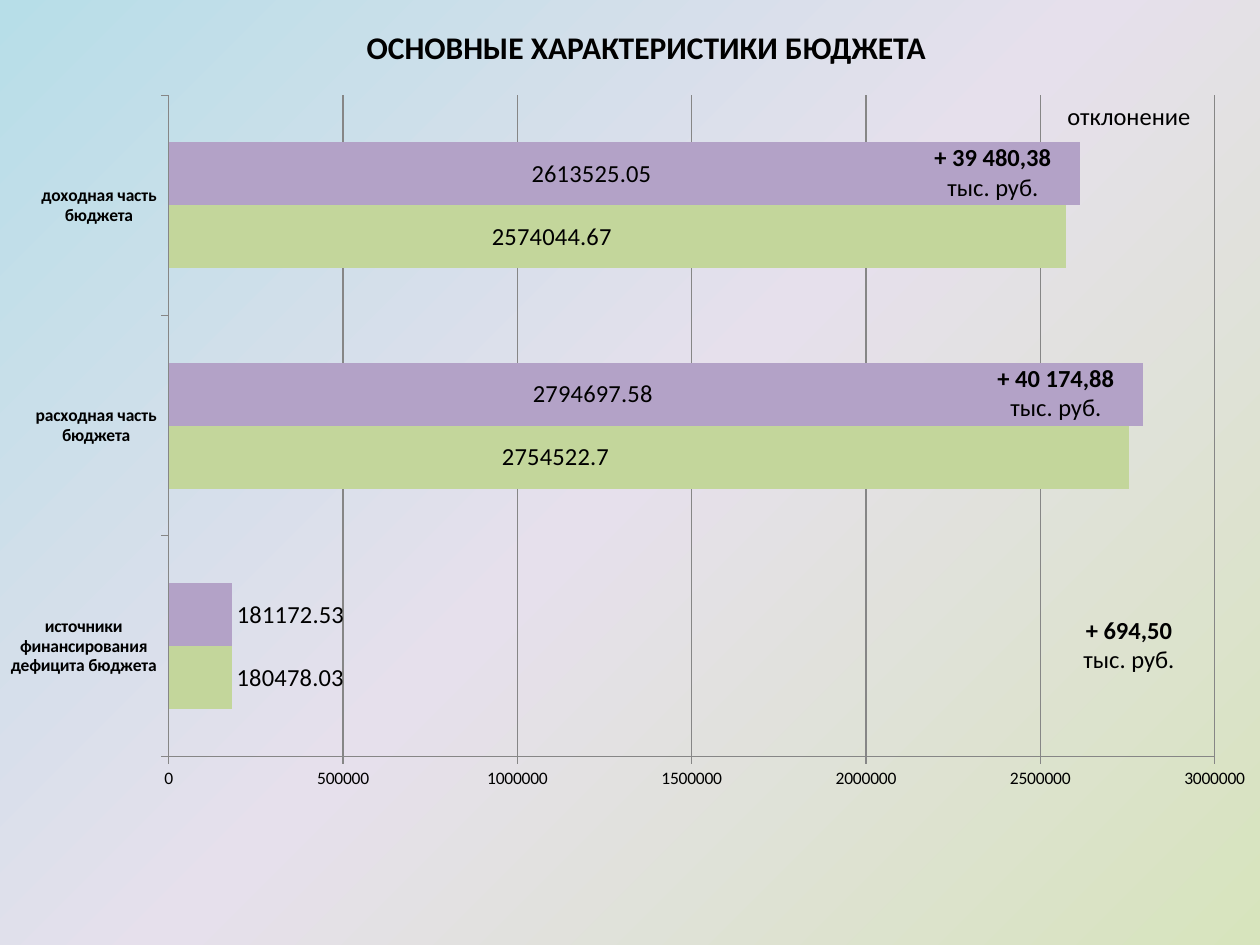
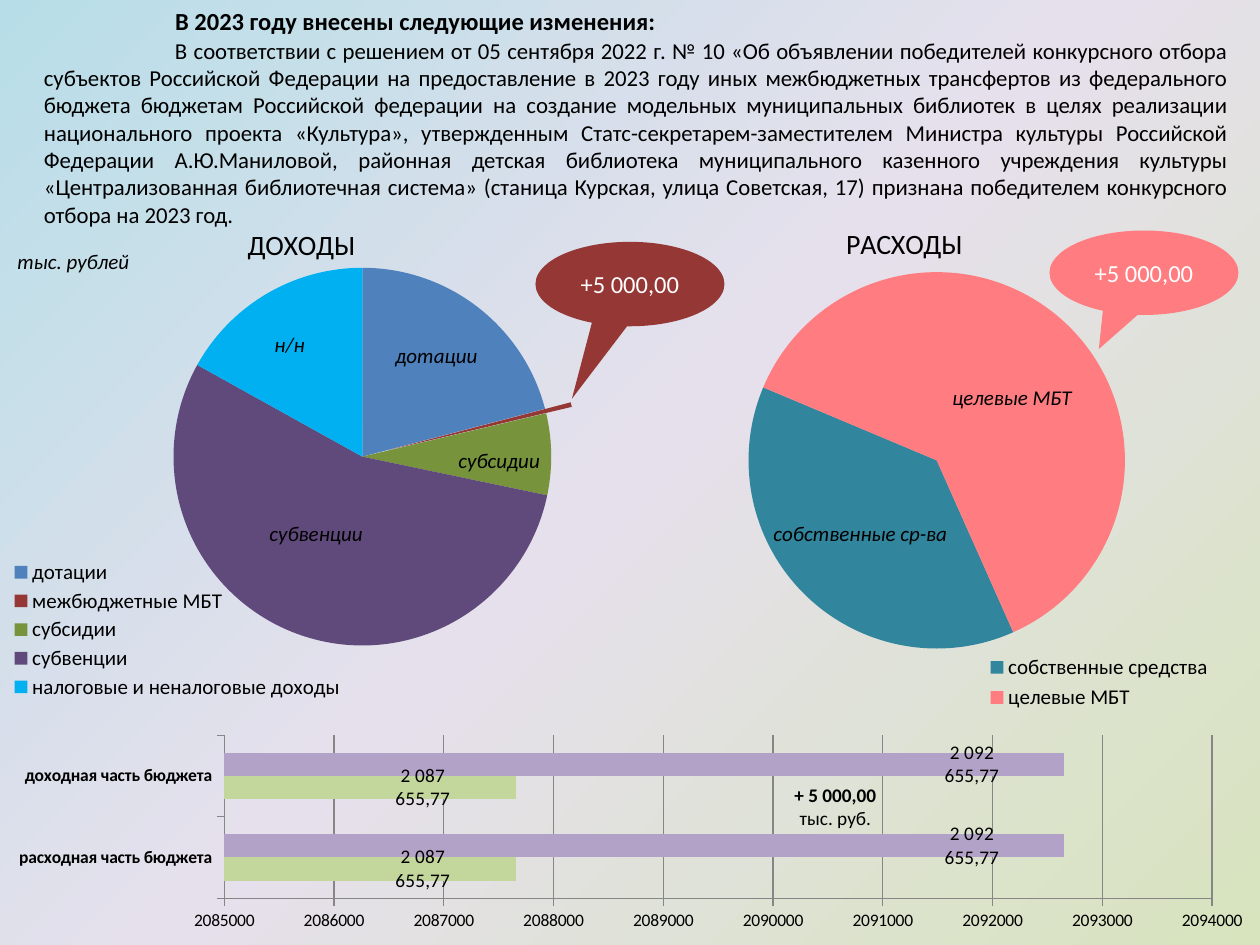
"""Builds two budget slides: main figures, then the changes made in 2023."""
from lxml import etree
from pptx import Presentation
from pptx import util as u
from pptx.chart import data as chart_data
from pptx.dml import color as dml
from pptx.enum import chart as ce
from pptx.enum import shapes, text
from pptx.oxml import ns

COLORS = {
    "text": "000000", "white": "FFFFFF", "grid": "868686",
    "before": "C3D69B", "after": "B3A2C7",
    "grants": "4F81BD", "transfers": "953735", "subsidies": "77933C",
    "subventions": "604A7B", "taxes": "00B0F0",
    "own": "31859C", "targeted": "FF7C80",
}
BACKGROUND = [(0, "D7E4BD"), (50, "E6E0EC"), (100, "B7DEE8")]
FONT = "Calibri"
BAR_COLORS = ("before", "after")
UNIT = "тыс. руб."

TITLE = "ОСНОВНЫЕ ХАРАКТЕРИСТИКИ БЮДЖЕТА"
BUDGET = {
    "at": (0, 0.75, 10, 6.75), "plot": (0.134, 0, 0.83, 0.778),
    "scale": (0, 3000000, 500000), "size": 14,
    "categories": ["источники финансирования дефицита бюджета",
                   "расходная часть бюджета", "доходная часть бюджета"],
    "values": [(180478.03, 2754522.7, 2574044.67),
               (181172.53, 2794697.58, 2613525.05)],
    "labels": [{1: (-0.074, None), 2: (-0.052, None)},
               {1: (-0.05, None), 2: (-0.026, None)}],
}
DEVIATIONS = [("+ 39 480,38", 7.17, 1.08), ("+ 40 174,88", 7.67, 2.83),
              ("+ 694,50", 8.25, 4.83)]

HEADING = "В 2023 году внесены следующие изменения:"
DECISION = (
    "В соответствии с решением от 05 сентября 2022 г. № 10 «Об объявлении "
    "победителей конкурсного отбора субъектов Российской Федерации на "
    "предоставление в 2023 году иных межбюджетных трансфертов из федерального "
    "бюджета бюджетам Российской федерации на создание модельных муниципальных "
    "библиотек в целях реализации национального проекта «Культура», "
    "утвержденным Статс-секретарем-заместителем Министра культуры Российской "
    "Федерации А.Ю.Маниловой, районная детская библиотека муниципального "
    "казенного учреждения культуры «Централизованная библиотечная система» "
    "(станица Курская, улица Советская, 17) признана победителем конкурсного "
    "отбора на 2023 год.")
PIES = [
    {"title": "ДОХОДЫ", "at": (0, 1.5, 5.5, 4.67), "start": 0, "exploded": 1,
     "plot": (0.212, 0.134, 0.622, 0.642), "title_at": (0.35, 0.055),
     "legend_at": (0.011, 0.624, 0.49, 0.25),
     "slices": [("дотации", 21, "grants"), ("межбюджетные МБТ", 0.4, "transfers"),
                ("субсидии", 7, "subsidies"), ("субвенции", 55, "subventions"),
                ("налоговые и неналоговые доходы", 17, "taxes")]},
    {"title": "РАСХОДЫ", "at": (4.83, 1.58, 5, 4.33), "start": 156, "exploded": None,
     "plot": (0.165, 0.134, 0.712, 0.69), "title_at": (0.369, 0.038),
     "legend_at": (0.589, 0.826, 0.38, 0.12),
     "slices": [("собственные средства", 38, "own"), ("целевые МБТ", 62, "targeted")]},
]
CALLOUTS = [("transfers", 4.25, 1.92, (-0.307, 1.358)),
            ("targeted", 8.33, 1.83, (-0.239, 0.904))]
CHANGE = "+5 000,00"
CHANGES = {
    "at": (0, 5.83, 10, 1.67), "plot": (0.178, 0, 0.784, 0.778),
    "scale": (2085000, 2094000, 1000), "size": 11,
    "categories": ["расходная часть бюджета", "доходная часть бюджета"],
    "values": [(2087655.77,) * 2, (2092655.77,) * 2],
    "labels": [dict.fromkeys((0, 1), (0.042, "2 087 655,77")),
               dict.fromkeys((0, 1), (0.26, "2 092 655,77"))],
}
NOTES = [("тыс. рублей", 0.04, 1.92, 1.1), ("целевые МБТ", 7.46, 3, 1.16),
         ("собственные ср-ва", 6.04, 4.08, 1.59), ("субвенции", 2.04, 4.08, 0.95),
         ("н/н", 2.08, 2.58, 0.45), ("дотации", 3.04, 2.67, 0.85),
         ("субсидии", 3.54, 3.5, 0.85)]


def rgb(name):
    return dml.RGBColor.from_string(COLORS[name])


def assign(target, **values):
    for key, value in values.items():
        setattr(target, key, value)


def style_font(font, size, color="text", **values):
    assign(font, name=FONT, size=u.Pt(size), **values)
    font.color.rgb = rgb(color)


def box(at):
    return [u.Inches(length) for length in at]


def write(shape, lines, size, align=text.PP_ALIGN.CENTER, color="text",
          anchor=text.MSO_ANCHOR.TOP, wrap=True, indent=0):
    frame = shape.text_frame
    frame.text = "\n".join(line for line, _ in lines)
    assign(frame, word_wrap=wrap, auto_size=text.MSO_AUTO_SIZE.NONE,
           vertical_anchor=anchor)
    for paragraph, (_, formats) in zip(frame.paragraphs, lines):
        paragraph.alignment = align
        style_font(paragraph.runs[0].font, size, color, **formats)
        if indent:
            properties = paragraph._p.get_or_add_pPr()
            properties.set("marL", "0")
            properties.set("indent", str(u.Inches(indent)))


def add_text(slide, at, lines, size, **formats):
    write(slide.shapes.add_textbox(*box(at)), lines, size, **formats)


def set_title(slide, at, line, size, **formats):
    title = slide.shapes.title
    assign(title, **dict(zip(("left", "top", "width", "height"), box(at))))
    write(title, [(line, {"bold": True})], size, **formats)


def add_deviation(slide, amount, left, top, size, height):
    add_text(slide, (left, top, 1.42, height),
             [(amount, {"bold": True}), (UNIT, {"bold": False})], size)


def place(parent, index, numbers, modes=("xMode", "yMode"), inner=False):
    for old in parent.findall(ns.qn("c:layout")):
        parent.remove(old)
    layout = etree.Element(ns.qn("c:layout"))
    manual = etree.SubElement(layout, ns.qn("c:manualLayout"))
    settings = [("layoutTarget", "inner")] if inner else []
    settings += [(mode, "edge") for mode in modes]
    settings += list(zip("xywh", map(str, numbers)))
    for tag, value in settings:
        etree.SubElement(manual, ns.qn("c:" + tag)).set("val", value)
    parent.insert(index, layout)


def clear_fill():
    properties = etree.Element(ns.qn("c:spPr"))
    etree.SubElement(properties, ns.qn("a:noFill"))
    line = etree.SubElement(properties, ns.qn("a:ln"))
    etree.SubElement(line, ns.qn("a:noFill"))
    return properties


def add_chart(slide, kind, at, plot_at, categories, series):
    source = chart_data.CategoryChartData()
    source.categories = categories
    for name, values in series:
        source.add_series(name, values)
    chart = slide.shapes.add_chart(kind, *box(at), source).chart
    style_font(chart.font, 18)
    assign(chart, has_legend=False, has_title=False)
    space = chart._chartSpace
    space.find(ns.qn("c:chart")).addnext(clear_fill())
    area = space.find(".//" + ns.qn("c:plotArea"))
    place(area, 0, plot_at, inner=True)
    area.append(clear_fill())
    return chart


def add_bars(slide, bars):
    chart = add_chart(slide, ce.XL_CHART_TYPE.BAR_CLUSTERED, bars["at"], bars["plot"],
                      bars["categories"], [("", values) for values in bars["values"]])
    plot = chart.plots[0]
    assign(plot, gap_width=150, overlap=0, vary_by_categories=False)
    low, high, step = bars["scale"]
    assign(chart.value_axis, minimum_scale=low, maximum_scale=high, major_unit=step,
           has_major_gridlines=True)
    chart.value_axis.major_gridlines.format.line.color.rgb = rgb("grid")
    for axis, bold in ((chart.category_axis, True), (chart.value_axis, False)):
        axis.major_tick_mark = ce.XL_TICK_MARK.OUTSIDE
        axis.format.line.color.rgb = rgb("grid")
        style_font(axis.tick_labels.font, 10, bold=bold)
    for row, color, labels in zip(plot.series, BAR_COLORS, bars["labels"]):
        row.format.fill.solid()
        row.format.fill.fore_color.rgb = rgb(color)
        assign(row.data_labels, show_value=True,
               position=ce.XL_LABEL_POSITION.OUTSIDE_END)
        style_font(row.data_labels.font, bars["size"])
        for index, (shift, words) in labels.items():
            label = row.points[index].data_label
            if words:
                label.text_frame.text = words
                style_font(label.text_frame.paragraphs[0].runs[0].font, bars["size"])
            else:
                style_font(label.font, bars["size"])
            label.position = ce.XL_LABEL_POSITION.CENTER
        for entry in row._element.findall(".//" + ns.qn("c:dLbl")):
            index = int(entry.find(ns.qn("c:idx")).get("val"))
            place(entry, 1, (labels[index][0], 0), modes=())
        for leader in row._element.findall(".//" + ns.qn("c:showLeaderLines")):
            leader.set("val", "0")


def add_pie(slide, pie):
    names, values, colors = zip(*pie["slices"])
    chart = add_chart(slide, ce.XL_CHART_TYPE.PIE, pie["at"], pie["plot"], names,
                      [(pie["title"], values)])
    assign(chart, has_title=True, has_legend=True)
    heading = chart.chart_title.text_frame
    heading.text = pie["title"]
    style_font(heading.paragraphs[0].runs[0].font, 16, bold=False)
    place(chart.chart_title._element, 1, pie["title_at"])
    assign(chart.legend, position=ce.XL_LEGEND_POSITION.RIGHT, include_in_layout=False)
    style_font(chart.legend.font, 12)
    place(chart.legend._element, 1, pie["legend_at"])
    plot = chart.plots[0]
    plot.vary_by_categories = True
    for index, color in enumerate(colors):
        fill = plot.series[0].points[index].format.fill
        fill.solid()
        fill.fore_color.rgb = rgb(color)
    for point in plot._element.findall(".//" + ns.qn("c:dPt")):
        if point.find(ns.qn("c:idx")).get("val") == str(pie["exploded"]):
            explosion = etree.Element(ns.qn("c:explosion"))
            explosion.set("val", "14")
            point.find(ns.qn("c:spPr")).addprevious(explosion)
    angle = plot._element.find(ns.qn("c:firstSliceAng"))
    if angle is None:
        angle = etree.SubElement(plot._element, ns.qn("c:firstSliceAng"))
    angle.set("val", str(pie["start"]))


def add_callout(slide, color, left, top, tip):
    callout = slide.shapes.add_shape(shapes.MSO_SHAPE.OVAL_CALLOUT,
                                     *box((left, top, 1.5, 0.67)))
    callout.shadow.inherit = False
    callout.fill.solid()
    callout.fill.fore_color.rgb = rgb(color)
    callout.line.fill.background()
    for index, value in enumerate(tip):
        callout.adjustments[index] = value
    write(callout, [(CHANGE, {})], 14, color="white", anchor=text.MSO_ANCHOR.MIDDLE)


def set_background(master):
    fill = master.background.fill
    fill.solid()
    solid = master._element.find(".//" + ns.qn("p:bgPr")).find(ns.qn("a:solidFill"))
    gradient = etree.Element(ns.qn("a:gradFill"), rotWithShape="1")
    stops = etree.SubElement(gradient, ns.qn("a:gsLst"))
    for position, color in BACKGROUND:
        stop = etree.SubElement(stops, ns.qn("a:gs"), pos=str(position * 1000))
        etree.SubElement(stop, ns.qn("a:srgbClr"), val=color)
    circle = etree.SubElement(gradient, ns.qn("a:path"))
    circle.set("path", "circle")
    etree.SubElement(circle, ns.qn("a:fillToRect"), l="100000", t="100000")
    etree.SubElement(gradient, ns.qn("a:tileRect"), r="-100000", b="-100000")
    solid.getparent().replace(solid, gradient)


def main():
    deck = Presentation()
    assign(deck, slide_width=u.Inches(10), slide_height=u.Inches(7.5))
    set_background(deck.slide_master)
    title_only = deck.slide_layouts[5]

    figures = deck.slides.add_slide(title_only)
    add_bars(figures, BUDGET)
    set_title(figures, (2.75, 0.17, 4.76, 0.4), TITLE, 18, wrap=False)
    add_text(figures, (8.17, 0.75, 1.58, 0.34), [("отклонение", {})], 14)
    for amount, left, top in DEVIATIONS:
        add_deviation(figures, amount, left, top, 14, 0.57)

    changes = deck.slides.add_slide(title_only)
    set_title(changes, (0.25, 0, 9.58, 0.34), HEADING, 14,
              align=text.PP_ALIGN.LEFT, indent=1.04)
    add_text(changes, (0.25, 0.24, 9.58, 1.7), [(DECISION, {})], 13,
             align=text.PP_ALIGN.JUSTIFY, indent=1.04)
    for pie in PIES:
        add_pie(changes, pie)
    for callout in CALLOUTS:
        add_callout(changes, *callout)
    add_bars(changes, CHANGES)
    add_deviation(changes, "+ 5 000,00", 5.92, 6.17, 11, 0.47)
    for note, left, top, width in NOTES:
        add_text(changes, (left, top, width, 0.3), [(note, {"italic": True})], 12,
                 align=text.PP_ALIGN.LEFT, wrap=False)
    deck.save("out.pptx")


main()
